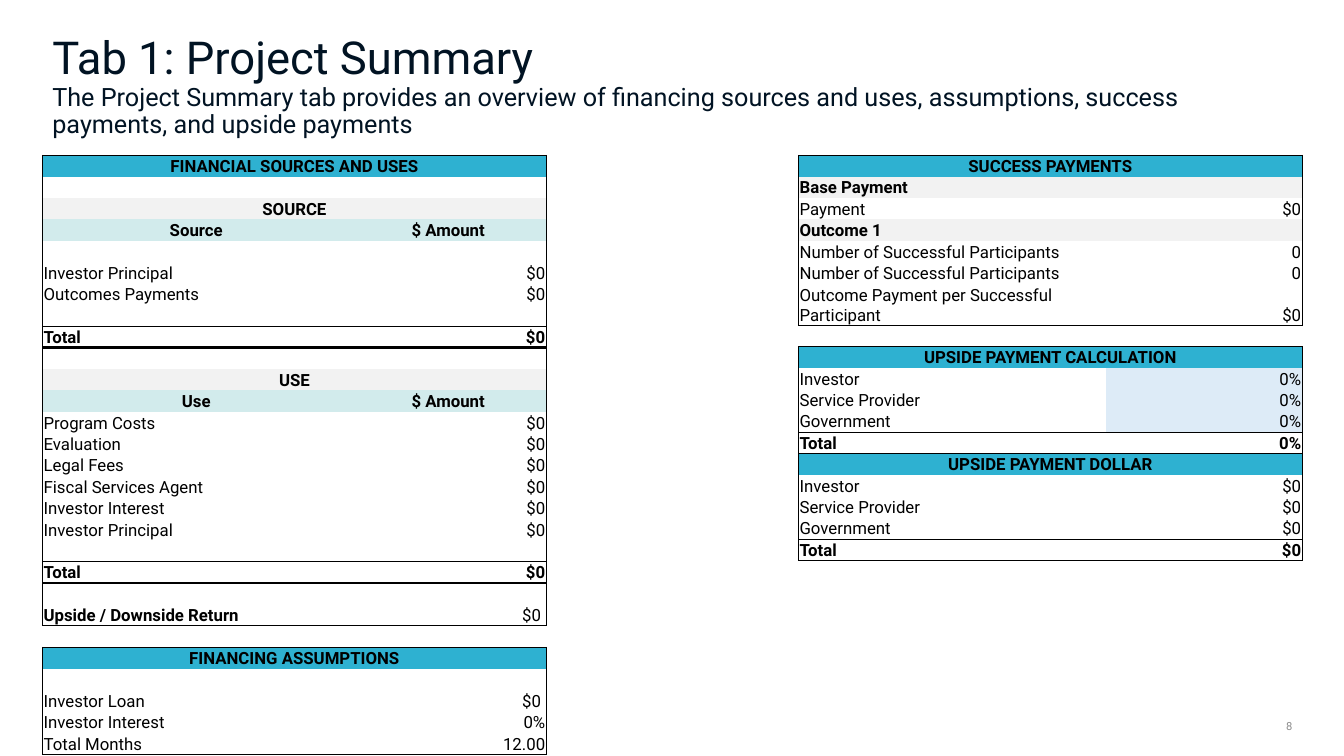
from lxml import etree
from pptx import Presentation
from pptx.dml.color import RGBColor
from pptx.enum import text
from pptx.oxml import ns
from pptx.util import Cm, Pt

FONT = "Roboto"
COLORS = {
    "title": "011323", "text": "000000", "page": "8C8C8C", "line": "000000",
    "header": "2EB1D1", "section": "F2F2F2", "columns": "D2EBEC", "share": "DDEBF7",
}
LEFT, CENTER, RIGHT = text.PP_ALIGN.LEFT, text.PP_ALIGN.CENTER, text.PP_ALIGN.RIGHT
MIDDLE, BOTTOM = text.MSO_ANCHOR.MIDDLE, text.MSO_ANCHOR.BOTTOM
TABLE_TOP, ROW_HEIGHT, COLUMN_WIDTHS = 3.91, 0.51, (7.75, 4.95)
THIN, THICK = 0.5, 2

# Each row is (kind, label, value).
BLANK, GAP = ("blank", "", ""), ("gap", "", "")
SOURCES_AND_USES = [
    ("header", "FINANCIAL SOURCES AND USES", ""),
    BLANK,
    ("section", "SOURCE", ""),
    ("columns", "Source", "$ Amount"),
    BLANK,
    ("item", "Investor Principal", "$0"),
    ("item", "Outcomes Payments", "$0"),
    BLANK,
    ("grand total", "Total", "$0"),
    BLANK,
    ("section", "USE", ""),
    ("columns", "Use", "$ Amount"),
    ("item", "Program Costs", "$0"),
    ("item", "Evaluation", "$0"),
    ("item", "Legal Fees", "$0"),
    ("item", "Fiscal Services Agent", "$0"),
    ("item", "Investor Interest", "$0"),
    ("item", "Investor Principal", "$0"),
    BLANK,
    ("grand total", "Total", "$0"),
    BLANK,
    ("return", "Upside / Downside Return", "$0 "),
    GAP,
    ("header", "FINANCING ASSUMPTIONS", ""),
    BLANK,
    ("item", "Investor Loan", "$0 "),
    ("item", "Investor Interest", "0%"),
    ("item", "Total Months", "12.00"),
]
PAYMENTS = [
    ("header", "SUCCESS PAYMENTS", ""),
    ("group", "Base Payment", ""),
    ("item", "Payment", "$0"),
    ("group", "Outcome 1", ""),
    ("item", "Number of Successful Participants", "0"),
    ("item", "Number of Successful Participants", "0"),
    ("item", "Outcome Payment per Successful Participant", "$0"),
    GAP,
    ("header", "UPSIDE PAYMENT CALCULATION", ""),
    ("share", "Investor", "0%"),
    ("share", "Service Provider", "0%"),
    ("share", "Government", "0%"),
    ("total", "Total", "0%"),
    ("header", "UPSIDE PAYMENT DOLLAR", ""),
    ("item", "Investor", "$0"),
    ("item", "Service Provider", "$0"),
    ("item", "Government", "$0"),
    ("total", "Total", "$0"),
]

BOLD_LABELS = {"header", "section", "columns", "group", "total", "grand total", "return"}
BOLD_VALUES = {"columns", "total", "grand total"}
CENTERED = {"header", "section", "columns"}
MERGED = {"header", "section"}
LABEL_FILLS = {"header": "header", "section": "section", "columns": "columns", "group": "section"}
VALUE_FILLS = {**LABEL_FILLS, "share": "share"}


def add_run(paragraph, words, size, color, bold=False):
    run = paragraph.add_run()
    run.text = words
    run.font.name, run.font.size, run.font.bold = FONT, Pt(size), bold
    run.font.color.rgb = RGBColor.from_string(COLORS[color])


def add_text_frame(slide, left, top, width, height):
    box = slide.shapes.add_textbox(Cm(left), Cm(top), Cm(width), Cm(height))
    frame = box.text_frame
    frame.word_wrap, frame.vertical_anchor = True, MIDDLE
    return frame


def add_title(slide, left, top, width, height):
    frame = add_text_frame(slide, left, top, width, height)
    frame.margin_bottom = Cm(0.8)
    paragraph = frame.paragraphs[0]
    paragraph.line_spacing = 0.9
    add_run(paragraph, "Tab 1: Project Summary", 32.4, "title")
    paragraph.add_line_break()
    add_run(paragraph, "The Project Summary tab provides an overview of financing sources and uses, "
            "assumptions, success payments, and upside payments", 18, "title")


def add_page_number(slide, left, top, width, height):
    paragraph = add_text_frame(slide, left, top, width, height).paragraphs[0]
    paragraph.alignment = RIGHT
    add_run(paragraph, "8", 8, "page")


def rule_width(above, below):
    """Width in points of the line between two kinds of row; None is the table's edge."""
    if above == "grand total":
        return THICK
    ruled = below in (None, "gap", "header", "total", "grand total")
    return THIN if ruled or above in (None, "gap") else 0


def set_borders(cell, widths):
    properties = cell._tc.get_or_add_tcPr()
    for side, width in zip("LRTB", widths):
        line = etree.SubElement(properties, ns.qn(f"a:ln{side}"), w=str(Pt(width)))
        if width:
            fill = etree.SubElement(line, ns.qn("a:solidFill"))
            etree.SubElement(fill, ns.qn("a:srgbClr"), val=COLORS["line"])
        else:
            etree.SubElement(line, ns.qn("a:noFill"))


def fill_cell(cell, words, alignment, bold, fill):
    cell.margin_left = cell.margin_right = cell.margin_top = Cm(0.03)
    cell.margin_bottom = 0
    cell.vertical_anchor = BOTTOM
    paragraph = cell.text_frame.paragraphs[0]
    paragraph.alignment = alignment
    if words:
        add_run(paragraph, words, 12, "text", bold)
    else:
        end = etree.SubElement(paragraph._p, ns.qn("a:endParaRPr"), sz="1200")
        etree.SubElement(end, ns.qn("a:latin"), typeface=FONT)
    if fill:
        cell.fill.solid()
        cell.fill.fore_color.rgb = RGBColor.from_string(COLORS[fill])
    else:
        cell.fill.background()


def add_summary_table(slide, left, top, rows):
    frame = slide.shapes.add_table(len(rows), 2, Cm(left), Cm(top), Cm(sum(COLUMN_WIDTHS)),
                                   Cm(ROW_HEIGHT * len(rows)))
    table = frame.table
    table.first_row = table.horz_banding = False
    for column, width in zip(table.columns, COLUMN_WIDTHS):
        column.width = Cm(width)
    kinds = [None, *(row[0] for row in rows), None]
    for index, (kind, label, value) in enumerate(rows):
        table.rows[index].height = Cm(ROW_HEIGHT)
        label_cell, value_cell = table.cell(index, 0), table.cell(index, 1)
        side = 0 if kind == "gap" else THIN
        top_rule = rule_width(kinds[index], kind)
        bottom_rule = rule_width(kind, kinds[index + 2])
        merged = kind in MERGED
        set_borders(label_cell, (side, side if merged else 0, top_rule, bottom_rule))
        set_borders(value_cell, (0, side, top_rule, bottom_rule))
        centered = kind in CENTERED
        fill_cell(label_cell, label, CENTER if centered else LEFT,
                  kind in BOLD_LABELS, LABEL_FILLS.get(kind))
        fill_cell(value_cell, value, CENTER if centered else RIGHT,
                  kind in BOLD_VALUES, VALUE_FILLS.get(kind))
        if merged:
            label_cell.merge(value_cell)


def main():
    presentation = Presentation()
    presentation.slide_width, presentation.slide_height = Cm(33.87), Cm(19.05)
    slide = presentation.slides.add_slide(presentation.slide_layouts[6])
    add_title(slide, 1.07, 1.27, 31.75, 2.54)
    add_page_number(slide, 25.83, 17.78, 6.99, 1.02)
    add_summary_table(slide, 1.07, TABLE_TOP, SOURCES_AND_USES)
    add_summary_table(slide, 20.12, TABLE_TOP, PAYMENTS)
    presentation.save("out.pptx")


if __name__ == "__main__":
    main()
